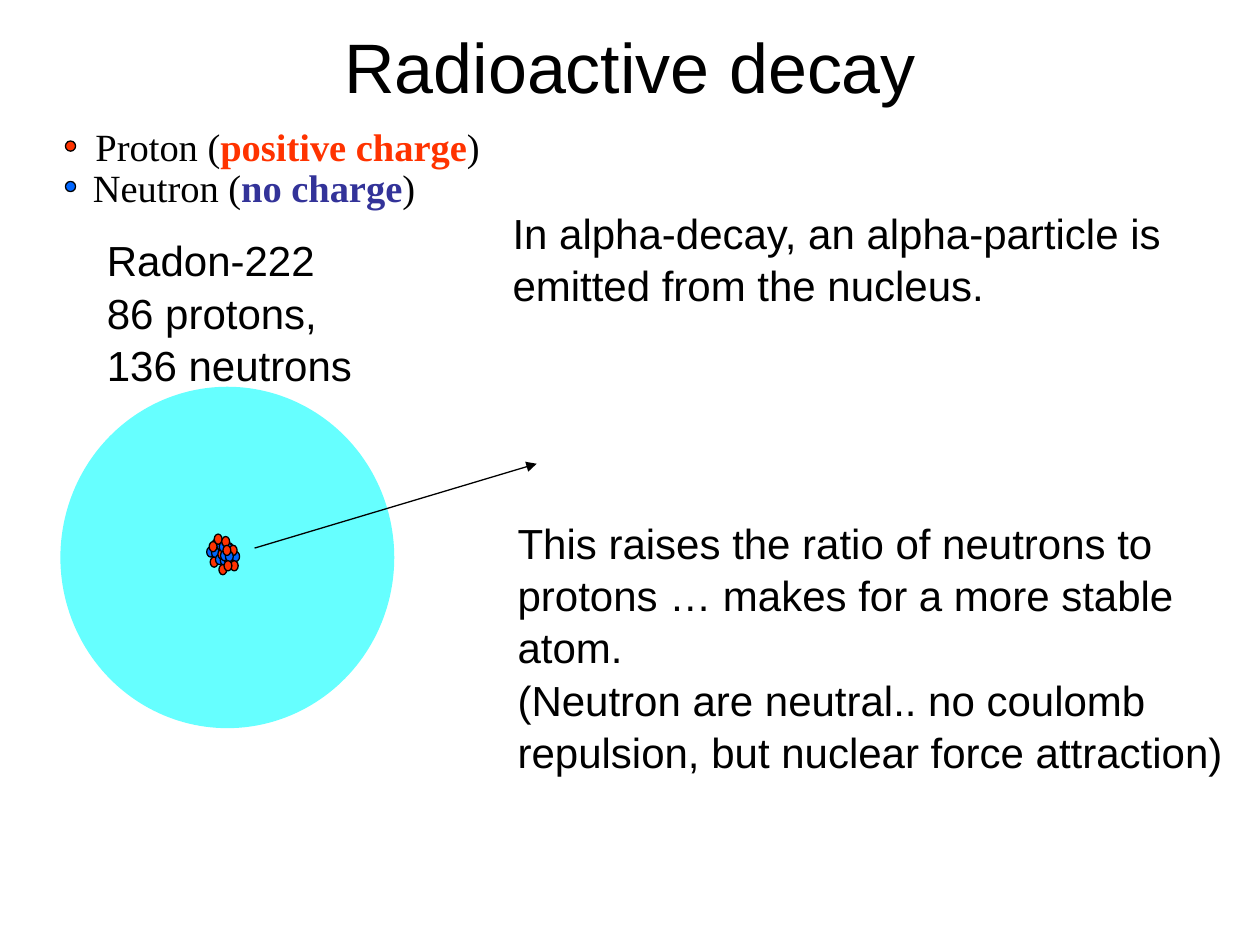
from lxml.etree import SubElement
from pptx import Presentation
from pptx.dml.color import RGBColor
from pptx.enum.shapes import MSO_CONNECTOR, MSO_SHAPE
from pptx.enum.text import MSO_ANCHOR, MSO_AUTO_SIZE, PP_ALIGN
from pptx.oxml.ns import qn
from pptx.util import Pt

BLACK = RGBColor(0x00, 0x00, 0x00)
CYAN = RGBColor(0x66, 0xFF, 0xFF)
PROTON = RGBColor(0xFF, 0x33, 0x00)
NEUTRON = RGBColor(0x00, 0x66, 0xFF)
INDIGO = RGBColor(0x33, 0x33, 0x99)

TITLE = "Radioactive decay"
LEGEND = [
    ((47.5, 67, 235, 34), (37.4, 80.6), PROTON, "Proton (", "positive charge", PROTON),
    ((46, 90, 199, 34), (37.4, 103.7), NEUTRON, "Neutron (", "no charge", INDIGO),
]
NOTES = [
    ((54, 129.6, 161.3, 93.6), False, ["Radon-222", "86 protons,", "136 neutrons"]),
    ((285.8, 113.8, 399.6, 64.8), True,
     ["In alpha-decay, an alpha-particle is emitted from the nucleus."]),
    ((288.7, 290.9, 419.8, 151.2), True,
     ["This raises the ratio of neutrons to protons … makes for a more stable atom.",
      "(Neutron are neutral.. no coulomb repulsion, but nuclear force attraction)"]),
]
ATOM = (34.5, 221, 190.8, 195.1)
ALPHA_PATH = (145.5, 313.2, 306.7, 265)
ALPHA_PARTICLE = [(0, 0, NEUTRON), (2.8, 0.5, NEUTRON), (1.4, -3, PROTON), (2, 5.8, PROTON)]
CLUSTERS = [(121, 308.2), (118.1, 312.5), (127.4, 313.2), (123.1, 316.8),
            (125.3, 309.6), (129.6, 314.6), (126, 314.6)]
NUCLEON_SIZE = (4.5, 5.8)
LEGEND_DOT_SIZE = (5.8, 5.8)


def points(values):
    return [Pt(value) for value in values]


def add_ball(shapes, box, color, outlined=True):
    ball = shapes.add_shape(MSO_SHAPE.OVAL, *points(box))
    ball.shadow.inherit = False
    ball.fill.solid()
    ball.fill.fore_color.rgb = color
    if outlined:
        ball.line.color.rgb = BLACK
        ball.line.width = Pt(0.75)
    else:
        ball.line.fill.background()


def add_text(slide, box, paragraphs, size, font, wrap=True, spacing=None):
    frame = slide.shapes.add_textbox(*points(box)).text_frame
    frame.word_wrap = wrap
    frame.auto_size = MSO_AUTO_SIZE.NONE
    for index, runs in enumerate(paragraphs):
        paragraph = frame.add_paragraph() if index else frame.paragraphs[0]
        paragraph.line_spacing = spacing
        for text, color, bold in runs:
            run = paragraph.add_run()
            run.text = text
            run.font.name = font
            run.font.size = Pt(size)
            run.font.bold = bold
            run.font.color.rgb = color
    return frame


def add_arrow(slide, ends):
    arrow = slide.shapes.add_connector(MSO_CONNECTOR.STRAIGHT, *points(ends))
    arrow.line.color.rgb = BLACK
    arrow.line.width = Pt(0.75)
    SubElement(arrow.line._get_or_add_ln(), qn("a:tailEnd"), type="triangle")
    SubElement(arrow._element.spPr, qn("a:effectLst"))


def main():
    deck = Presentation()
    deck.slide_width, deck.slide_height = Pt(720), Pt(540)
    slide = deck.slides.add_slide(deck.slide_layouts[6])

    title = add_text(slide, (36, 21.6, 648, 31.7), [[(TITLE, BLACK, False)]], 40, "Arial")
    title.vertical_anchor = MSO_ANCHOR.MIDDLE
    title.paragraphs[0].alignment = PP_ALIGN.CENTER

    add_ball(slide.shapes, ATOM, CYAN, outlined=False)
    for left, top in CLUSTERS:
        cluster = slide.shapes.add_group_shape()
        for dx, dy, color in ALPHA_PARTICLE:
            add_ball(cluster.shapes, (left + dx, top + dy, *NUCLEON_SIZE), color)

    for box, dot, dot_color, label, charge, charge_color in LEGEND:
        add_ball(slide.shapes, (*dot, *LEGEND_DOT_SIZE), dot_color)
        runs = [(label, BLACK, False), (charge, charge_color, True), (")", BLACK, False)]
        add_text(slide, box, [runs], 22, "Times New Roman", wrap=False)

    add_arrow(slide, ALPHA_PATH)
    for box, wrap, lines in NOTES:
        paragraphs = [[(line, BLACK, False)] for line in lines]
        add_text(slide, box, paragraphs, 24, "Arial", wrap, spacing=1.04)

    deck.save("out.pptx")


if __name__ == "__main__":
    main()
